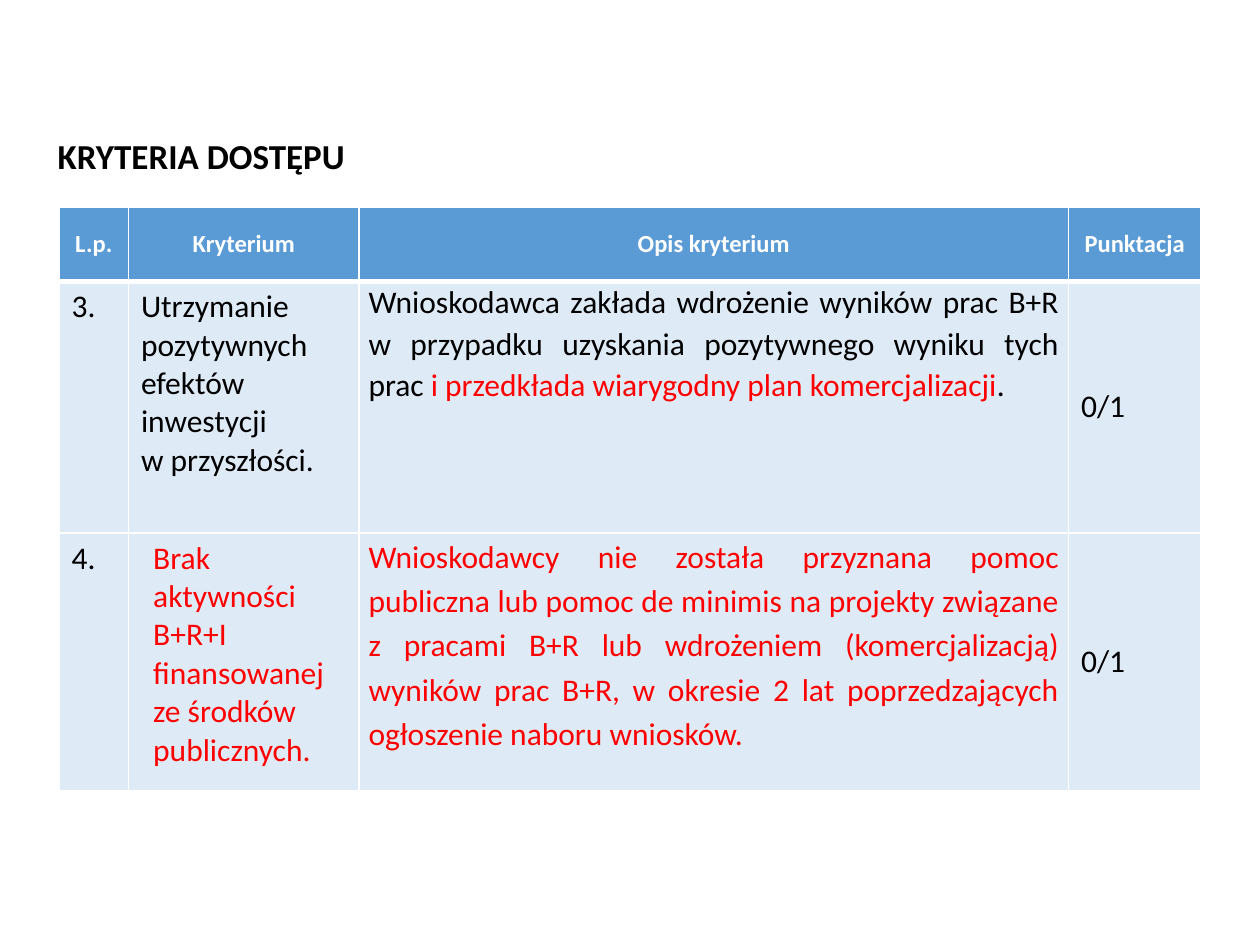
"""Build the slide with the table of access criteria."""
import lxml.etree
import pptx
import pptx.dml.color
import pptx.enum.text
import pptx.oxml.ns
import pptx.util

Cm = pptx.util.Cm
Pt = pptx.util.Pt
ALIGN = pptx.enum.text.PP_ALIGN
ANCHOR = pptx.enum.text.MSO_ANCHOR

THEME = {
    "font": "Calibri",
    "title": Pt(20), "header": Pt(14), "body": Pt(18),
    "black": "000000", "white": "FFFFFF", "red": "FF0000",
    "header_fill": "5B9BD5", "row_fill": "DEEBF7",
}


def write_runs(paragraph, runs, size, bold):
    for wording, color in runs:
        run = paragraph.add_run()
        run.text = wording
        for name, value in {"name": THEME["font"], "size": size, "bold": bold}.items():
            setattr(run.font, name, value)
        run.font.color.rgb = pptx.dml.color.RGBColor.from_string(THEME[color])


def draw_border(cell, side, width):
    line = lxml.etree.SubElement(
        cell._tc.get_or_add_tcPr(), pptx.oxml.ns.qn(f"a:ln{side}"), w=str(Pt(width)))
    fill = lxml.etree.SubElement(line, pptx.oxml.ns.qn("a:solidFill"))
    lxml.etree.SubElement(fill, pptx.oxml.ns.qn("a:srgbClr"), val=THEME["white"])


presentation = pptx.Presentation()
presentation.slide_width, presentation.slide_height = Cm(25.4), Cm(19.05)
slide = presentation.slides.add_slide(presentation.slide_layouts[5])

heading = slide.shapes.title
heading_place = {"left": Cm(0.91), "top": Cm(2.57), "width": Cm(9.4), "height": Cm(1.12)}
for name, value in heading_place.items():
    setattr(heading, name, value)
heading_format = {"vertical_anchor": ANCHOR.MIDDLE, "word_wrap": True,
                  "auto_size": pptx.enum.text.MSO_AUTO_SIZE.NONE}
for name, value in heading_format.items():
    setattr(heading.text_frame, name, value)
heading.text_frame.paragraphs[0].alignment = ALIGN.LEFT
write_runs(heading.text_frame.paragraphs[0], [("KRYTERIA DOSTĘPU", "black")],
           THEME["title"], True)

column_widths = [Cm(1.4), Cm(4.65), Cm(14.3), Cm(2.67)]
row_heights = [Cm(1.5), Cm(5.07), Cm(5.21)]

header_cell = {"vertical_anchor": ANCHOR.MIDDLE}
score_cell = {"vertical_anchor": ANCHOR.MIDDLE}
description_cell = {"margin_left": Cm(0.19), "margin_right": Cm(0.19),
                    "margin_top": 0, "margin_bottom": 0}
indented_cell = {"margin_left": Cm(0.5)}
centred = {"alignment": ALIGN.CENTER}
left = {"alignment": ALIGN.LEFT}
plan_text = {"alignment": ALIGN.JUSTIFY, "line_spacing": 1.07, "space_after": Pt(6)}
aid_text = {"alignment": ALIGN.JUSTIFY, "line_spacing": 1.15, "space_after": Pt(10)}

criteria = [
    [(header_cell, centred, [[(label, "white")]])
     for label in ("L.p.", "Kryterium", "Opis kryterium", "Punktacja")],
    [
        ({}, left, [[("3.", "black")]]),
        ({}, left, [[("Utrzymanie pozytywnych efektów inwestycji", "black")],
                    [("w przyszłości.", "black")]]),
        (description_cell, plan_text, [[
            ("Wnioskodawca zakłada wdrożenie wyników prac B+R w przypadku uzyskania "
             "pozytywnego wyniku tych prac ", "black"),
            ("i przedkłada wiarygodny plan komercjalizacji", "red"),
            (".", "black")]]),
        (score_cell, left, [[("0/1", "black")]]),
    ],
    [
        ({}, left, [[("4.", "black")]]),
        (indented_cell, left, [[
            ("Brak aktywności B+R+I finansowanej ze środków publicznych.", "red")]]),
        (description_cell, aid_text, [[
            ("Wnioskodawcy nie została przyznana pomoc publiczna lub pomoc de minimis "
             "na projekty związane z pracami B+R lub wdrożeniem (komercjalizacją) "
             "wyników prac B+R, w okresie 2 lat poprzedzających ogłoszenie naboru "
             "wniosków.", "red")]]),
        (score_cell, left, [[("0/1", "black")]]),
    ],
]

criteria_table = slide.shapes.add_table(
    len(row_heights), len(column_widths), Cm(1.19), Cm(4.17),
    sum(column_widths), sum(row_heights)).table
for column, width in zip(criteria_table.columns, column_widths):
    column.width = width
for row, height in zip(criteria_table.rows, row_heights):
    row.height = height

for row_index, entries in enumerate(criteria):
    is_header = row_index == 0
    for column_index, (cell_format, paragraph_format, paragraphs) in enumerate(entries):
        cell = criteria_table.cell(row_index, column_index)
        for name, value in cell_format.items():
            setattr(cell, name, value)
        border_widths = {"L": 1, "R": 1, "T": 3 if row_index == 1 else 1,
                         "B": 3 if is_header else 1}
        for side, width in border_widths.items():
            draw_border(cell, side, width)
        cell.fill.solid()
        cell.fill.fore_color.rgb = pptx.dml.color.RGBColor.from_string(
            THEME["header_fill" if is_header else "row_fill"])
        for index, runs in enumerate(paragraphs):
            frame = cell.text_frame
            paragraph = frame.add_paragraph() if index else frame.paragraphs[0]
            for name, value in paragraph_format.items():
                setattr(paragraph, name, value)
            write_runs(paragraph, runs, THEME["header" if is_header else "body"], is_header)

presentation.save("out.pptx")
